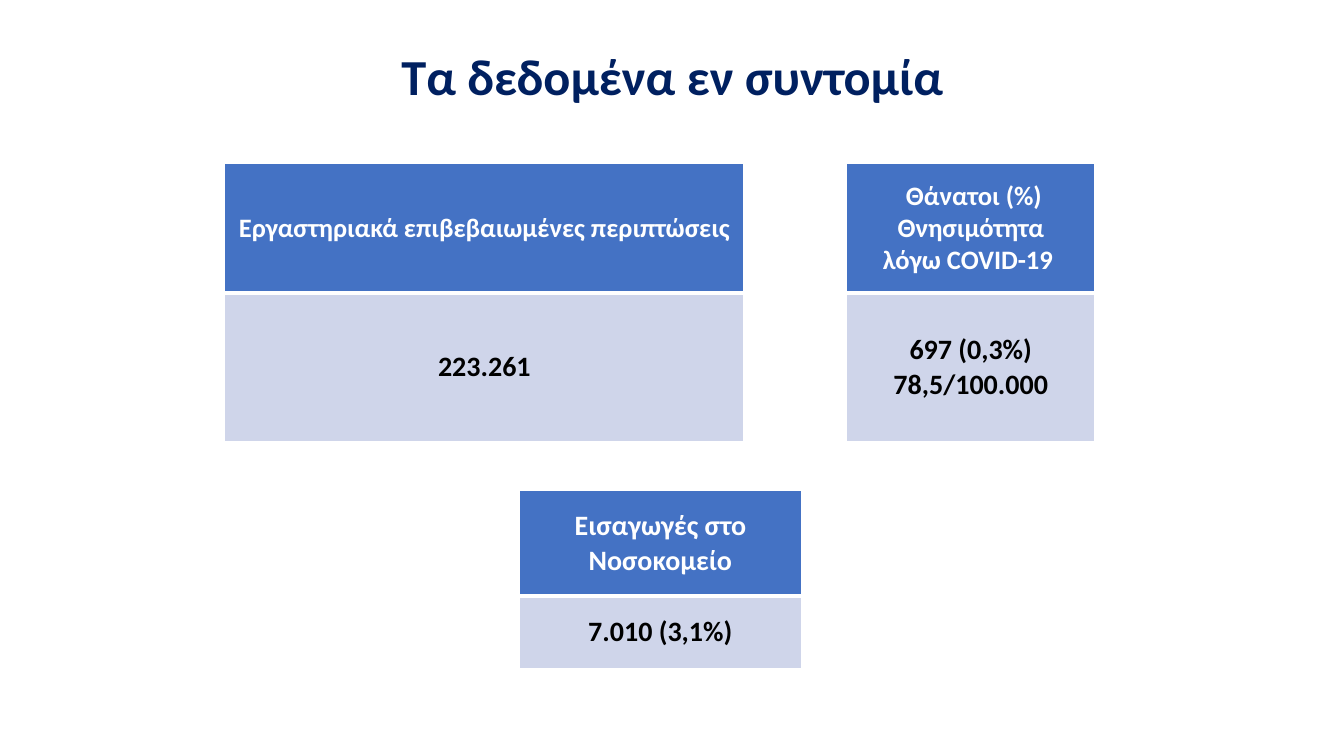
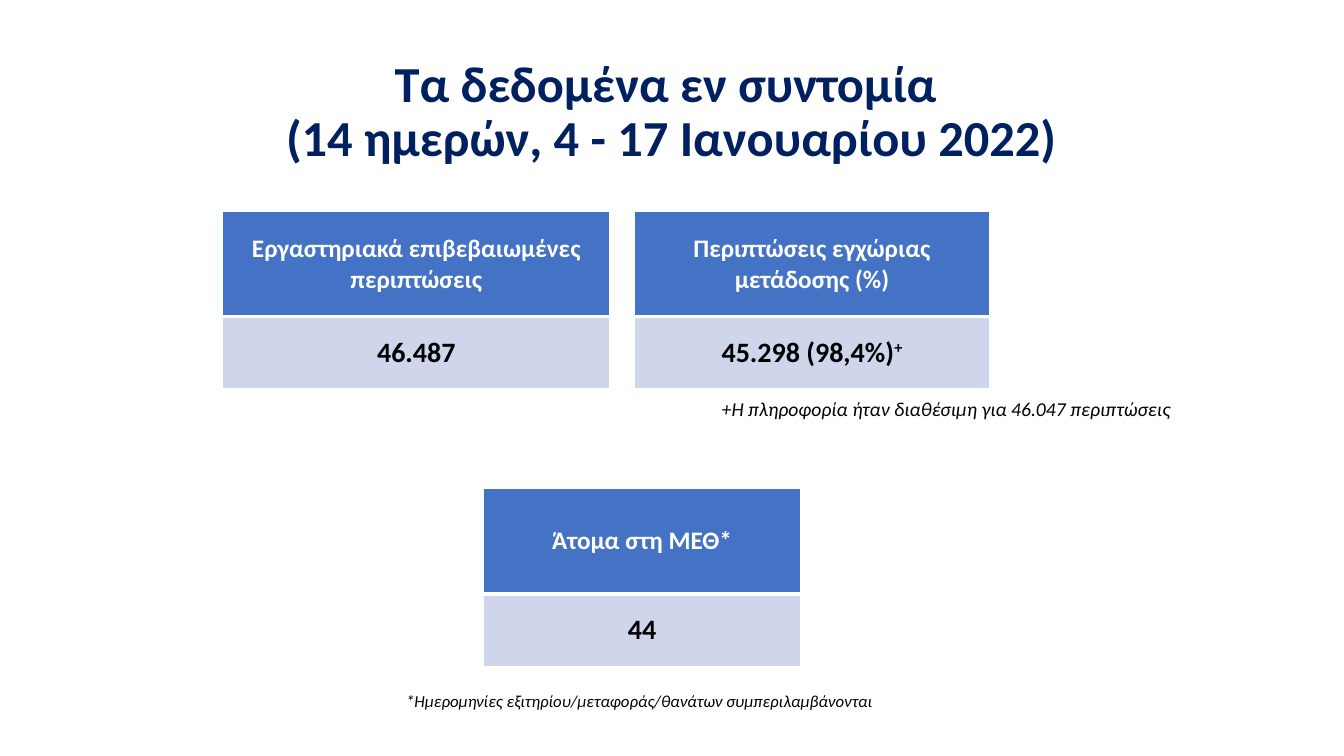
import pptx
import pptx.util
import pptx.dml.color
import pptx.enum.text
import pptx.oxml.ns
import lxml.etree

Inches = pptx.util.Inches
Pt = pptx.util.Pt
RGBColor = pptx.dml.color.RGBColor
CENTER = pptx.enum.text.PP_ALIGN.CENTER
MIDDLE = pptx.enum.text.MSO_ANCHOR.MIDDLE
qn = pptx.oxml.ns.qn

NAVY = RGBColor(0x00, 0x20, 0x60)
BLUE = RGBColor(0x44, 0x72, 0xC4)
PALE = RGBColor(0xCF, 0xD5, 0xEA)
WHITE = RGBColor(0xFF, 0xFF, 0xFF)
BLACK = RGBColor(0x00, 0x00, 0x00)
FONT = "Calibri"
VALUE_SIZE = 20
TITLE_ONLY = 5

# Each table: left, top, column widths, row heights, header size, and
# column index -> (header lines, value lines); "^" starts a superscript
SLIDES = [
    {
        "title": ["Τα δεδομένα εν συντομία"],
        "title_at": (0.92, 0.4, 11.5, 0.78),
        "tables": [
            (2.23, 1.62, [5.15, 0.42, 0.28, 0.32, 2.46, 0.64], [1.29, 1.47], 19, {
                0: (["Εργαστηριακά επιβεβαιωμένες περιπτώσεις"], ["223.261"]),
                4: ([" Θάνατοι (%)", "Θνησιμότητα", "λόγω COVID-19 "],
                    ["697 (0,3%)", "78,5/100.000"]),
            }),
            (5.15, 4.87, [2.8, 0.23], [1.04, 0.72], 20, {
                0: (["Εισαγωγές στο Νοσοκομείο"], ["7.010 (3,1%)"]),
            }),
        ],
        "notes": [],
    },
    {
        "title": ["Τα δεδομένα εν συντομία ", "(14 ημερών, 4 - 17 Ιανουαρίου 2022)"],
        "title_at": (0.37, 0.4, 12.58, 1.45),
        "tables": [
            (2.21, 2.1, [3.84, 0.23, 3.53, 0.23, 0.23, 0.26], [1.04, 0.72], 18, {
                0: (["Εργαστηριακά επιβεβαιωμένες περιπτώσεις"], ["46.487"]),
                2: (["Περιπτώσεις εγχώριας μετάδοσης (%)"], ["45.298 (98,4%)^+"]),
            }),
            (4.56, 4.85, [0.23, 3.14], [1.04, 0.72], 18, {
                1: (["Άτομα στη ΜΕΘ*"], ["44"]),
            }),
        ],
        "notes": [
            ("*Ημερομηνίες εξιτηρίου/μεταφοράς/θανάτων συμπεριλαμβάνονται",
             (3.93, 6.8, 4.87, 0.3), 12),
            ("+Η πληροφορία ήταν διαθέσιμη για 46.047 περιπτώσεις",
             (7.06, 3.89, 4.69, 0.34), 14),
        ],
    },
]


def add_span(para, text, size, color, bold=False, italic=False):
    span = para.add_run()
    span.text = text
    span.font.name = FONT
    span.font.size = Pt(size)
    span.font.color.rgb = color
    span.font.bold = bold
    span.font.italic = italic
    return span


def add_borders(cell, bottom_width):
    properties = cell._tc.get_or_add_tcPr()
    for side, width in (("L", 1), ("R", 1), ("T", 1), ("B", bottom_width)):
        line = lxml.etree.SubElement(properties, qn("a:ln" + side), w=str(Pt(width)))
        fill = lxml.etree.SubElement(line, qn("a:solidFill"))
        lxml.etree.SubElement(fill, qn("a:srgbClr"), val=str(WHITE))


deck = pptx.Presentation()
deck.slide_width = Inches(13.33)
deck.slide_height = Inches(7.5)

for content in SLIDES:
    page = deck.slides.add_slide(deck.slide_layouts[TITLE_ONLY])

    # Title
    title = page.shapes.title
    title.left, title.top, title.width, title.height = map(Inches, content["title_at"])
    title.text_frame.auto_size = pptx.enum.text.MSO_AUTO_SIZE.NONE
    title.text_frame.vertical_anchor = MIDDLE
    para = title.text_frame.paragraphs[0]
    para.alignment = CENTER
    para.line_spacing = 0.9
    for index, text in enumerate(content["title"]):
        if index:
            para.add_line_break()
        add_span(para, text, 36, NAVY, bold=True)

    # Tables: a blue header over a pale value, with white spacer columns
    for left, top, widths, heights, header_size, figures in content["tables"]:
        table = page.shapes.add_table(
            len(heights), len(widths), Inches(left), Inches(top),
            Inches(sum(widths)), Inches(sum(heights))).table
        for column, width in zip(table.columns, widths):
            column.width = Inches(width)
        row_styles = [(BLUE, WHITE, header_size, 3), (PALE, BLACK, VALUE_SIZE, 1)]
        for row, (back, ink, size, bottom_width) in enumerate(row_styles):
            table.rows[row].height = Inches(heights[row])
            for column in range(len(widths)):
                cell = table.cell(row, column)
                add_borders(cell, bottom_width)
                cell.fill.solid()
                cell.fill.fore_color.rgb = back if column in figures else WHITE
                if column not in figures:
                    continue
                cell.vertical_anchor = MIDDLE
                for index, text in enumerate(figures[column][row]):
                    frame = cell.text_frame
                    para = frame.add_paragraph() if index else frame.paragraphs[0]
                    para.alignment = CENTER
                    base, _, raised = text.partition("^")
                    add_span(para, base, size, ink, bold=True)
                    if raised:
                        span = add_span(para, raised, size, ink, bold=True)
                        span.font._element.set("baseline", "30000")

    # Footnotes
    for text, place, size in content["notes"]:
        box = page.shapes.add_textbox(*map(Inches, place))
        box.text_frame.word_wrap = False
        box.text_frame.auto_size = pptx.enum.text.MSO_AUTO_SIZE.SHAPE_TO_FIT_TEXT
        add_span(box.text_frame.paragraphs[0], text, size, BLACK, italic=True)

deck.save("out.pptx")
